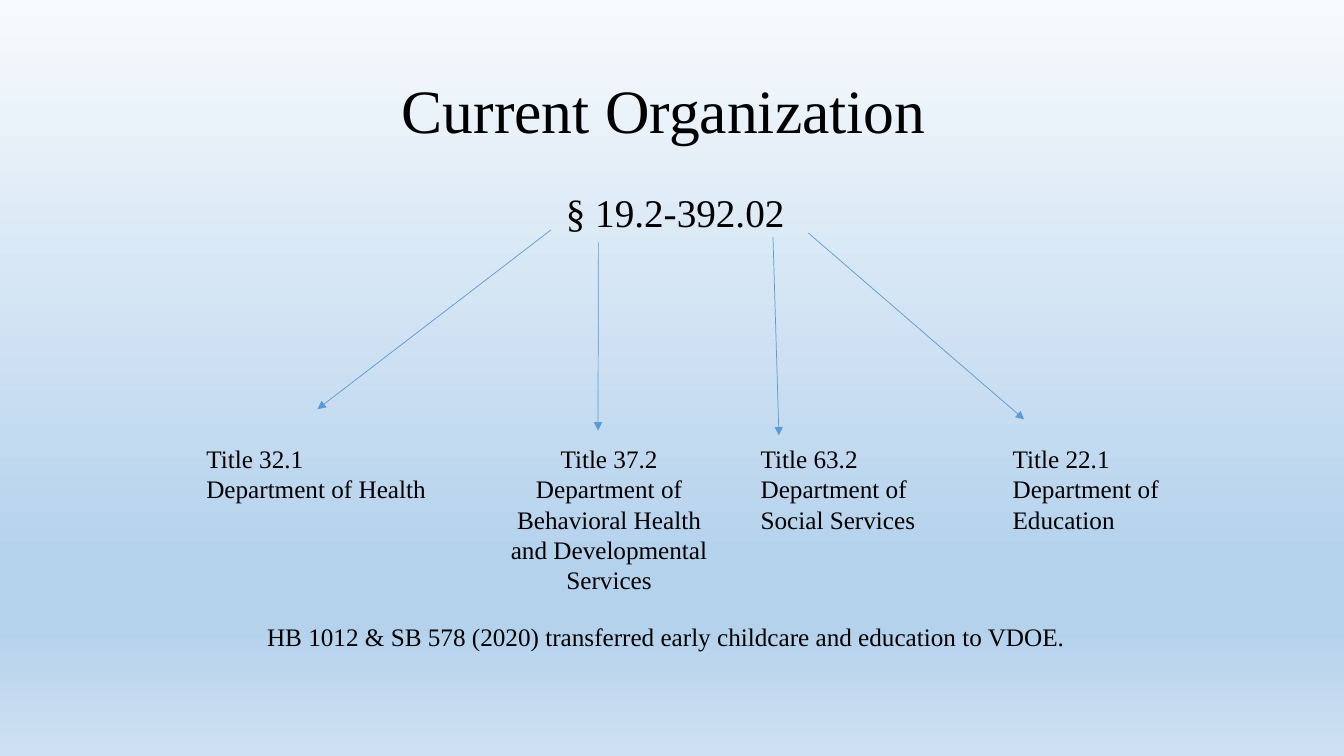
import copy

import pptx
import pptx.util
import pptx.dml.color
import pptx.enum.shapes
import pptx.enum.text
import pptx.oxml
import pptx.oxml.ns

Cm, Pt = pptx.util.Cm, pptx.util.Pt
ALIGN = pptx.enum.text.PP_ALIGN
ANCHOR = pptx.enum.text.MSO_ANCHOR

TITLE = "Current Organization"
SECTION = "§ 19.2-392.02"
NOTE = "HB 1012 & SB 578 (2020) transferred early childcare and education to VDOE."
# left edge (cm), width (cm), alignment, lines
DEPARTMENTS = [
    (4.95, 6.6, ALIGN.LEFT, ["Title 32.1", "Department of Health"]),
    (12.15, 6.4, ALIGN.CENTER, ["Title 37.2", "Department of", "Behavioral Health",
                                "and Developmental", "Services"]),
    (18.92, 5.2, ALIGN.LEFT, ["Title 63.2", "Department of", "Social Services"]),
    (25.27, 5.2, ALIGN.LEFT, ["Title 22.1", "Department of", "Education"]),
]
# start x, start y, end x, end y (cm)
ARROWS = [
    (13.89, 5.79, 8.0, 10.31),
    (15.08, 6.1, 15.07, 10.85),
    (19.48, 5.97, 19.63, 10.97),
    (20.37, 5.87, 25.81, 10.57),
]
BACKGROUND = [(0, "top"), (0.74, "band"), (0.83, "band"), (1, "bottom")]
COLORS = {"top": "F7FAFD", "band": "B5D2EC", "bottom": "CEE1F2",
          "arrow": "5B9BD5", "text": "000000"}
FONT = "Times New Roman"
DEPARTMENT_TOP, DEPARTMENT_HEIGHT = 11.05, 4.11


def color(name):
    return pptx.dml.color.RGBColor.from_string(COLORS[name])


def paint_background(page):
    fill = page.background.fill
    fill.gradient()
    fill.gradient_angle = 270
    stops = page._element.find(".//" + pptx.oxml.ns.qn("a:gsLst"))
    while len(stops) < len(BACKGROUND):
        stops.append(copy.deepcopy(stops[0]))
    for stop, (position, name) in zip(fill.gradient_stops, BACKGROUND):
        stop.position = position
        stop.color.rgb = color(name)


def place(box, left, top, width, height):
    box.left, box.top, box.width, box.height = map(Cm, (left, top, width, height))


def write(box, lines, size, align, anchor=ANCHOR.TOP, spacing=1.0, before=0):
    frame = box.text_frame
    frame.word_wrap = True
    frame.vertical_anchor = anchor
    frame.text = "\n".join(lines)
    for para in frame.paragraphs:
        para.alignment = align
        para.line_spacing = spacing
        para.space_before = Pt(before)
        para.font.name = FONT
        para.font.size = Pt(size)
        para.font.color.rgb = color("text")


def add_text(page, left, top, width, height, lines, align):
    box = page.shapes.add_textbox(Cm(left), Cm(top), Cm(width), Cm(height))
    write(box, lines, 18, align)


def add_arrow(page, *ends):
    arrow = page.shapes.add_connector(
        pptx.enum.shapes.MSO_CONNECTOR.STRAIGHT, *map(Cm, ends))
    arrow.line.color.rgb = color("arrow")
    arrow.line.width = Pt(0.5)
    head = pptx.oxml.ns.qn("a:tailEnd")
    line = arrow.line._get_or_add_ln()
    line.append(line.makeelement(head, {"type": "triangle"}))
    properties = arrow._element.spPr
    properties.append(properties.makeelement(pptx.oxml.ns.qn("a:effectLst"), {}))


def remove_bullet(para):
    properties = para._p.get_or_add_pPr()
    properties.set("marL", "0")
    properties.set("indent", "0")
    properties.append(properties.makeelement(pptx.oxml.ns.qn("a:buNone"), {}))


def main():
    deck = pptx.Presentation()
    deck.slide_width, deck.slide_height = Cm(33.87), Cm(19.05)
    page = deck.slides.add_slide(deck.slide_layouts[1])
    paint_background(page)

    title, body = page.placeholders
    place(title, 2.13, 1.02, 29.21, 3.68)
    write(title, [TITLE], 44, ALIGN.CENTER, ANCHOR.MIDDLE, spacing=0.9)
    place(body, 2.41, 4.75, 29.21, 12.09)
    write(body, [SECTION], 28, ALIGN.CENTER, spacing=0.9, before=10)
    remove_bullet(body.text_frame.paragraphs[0])

    for ends in ARROWS:
        add_arrow(page, *ends)
    for left, width, align, lines in DEPARTMENTS:
        add_text(page, left, DEPARTMENT_TOP, width, DEPARTMENT_HEIGHT, lines, align)
    add_text(page, 6.48, 15.52, 21.08, 1.03, [NOTE], ALIGN.LEFT)
    deck.save("out.pptx")


if __name__ == "__main__":
    main()
